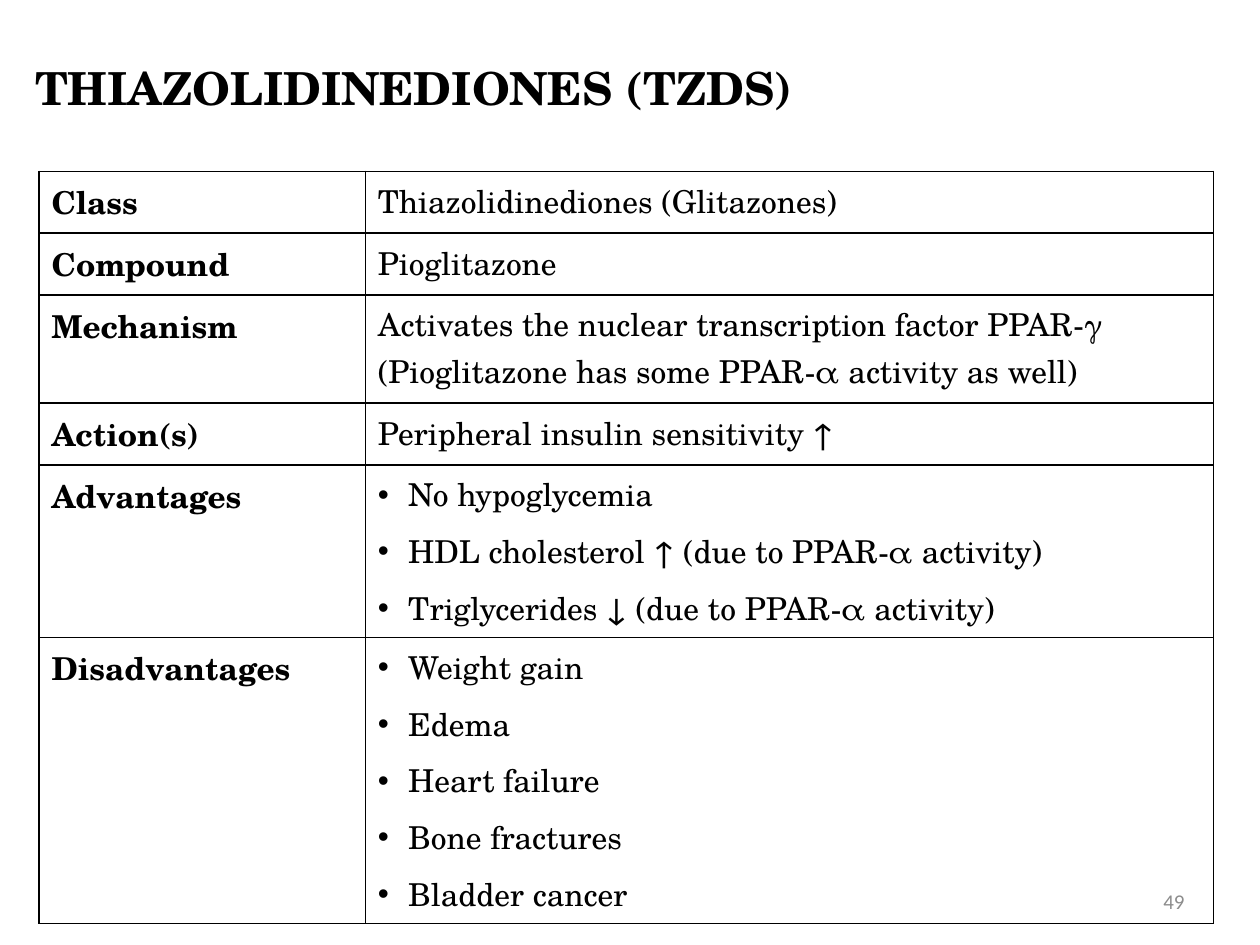
from pptx import Presentation
from pptx.dml.color import RGBColor
from pptx.enum.text import MSO_ANCHOR, PP_ALIGN
from pptx.oxml import parse_xml
from pptx.oxml.ns import nsdecls
from pptx.util import Inches, Pt

SERIF = "TeX Gyre Schola"


def style(paragraph, size, color="000000", bold=False, name=SERIF):
    for span in paragraph.runs:
        span.font.size = Pt(size)
        span.font.bold = bold
        span.font.name = name
        span.font.color.rgb = RGBColor.from_string(color)


def add_text(page, text, left, top, width, height):
    box = page.shapes.add_textbox(Inches(left), Inches(top), Inches(width), Inches(height))
    box.text_frame.word_wrap = True
    box.text_frame.vertical_anchor = MSO_ANCHOR.MIDDLE
    box.text_frame.text = text
    return box.text_frame.paragraphs[0]


deck = Presentation()
deck.slide_width, deck.slide_height = Inches(10), Inches(7.5)
page = deck.slides.add_slide(deck.slide_layouts[6])

# Title
title = add_text(page, "THIAZOLIDINEDIONES (TZDS)", 0.18, 0.3, 9.57, 0.78)
style(title, 26, bold=True)

# Drug profile: label, row height, entries (several entries become bullets)
profile = [
    ("Class", 0.49, ["Thiazolidinediones (Glitazones)"]),
    ("Compound", 0.49, ["Pioglitazone"]),
    ("Mechanism", 0.86, ["Activates the nuclear transcription factor PPAR-γ "
                         "(Pioglitazone has some PPAR-α activity as well)"]),
    ("Action(s)", 0.49, ["Peripheral insulin sensitivity ↑"]),
    ("Advantages", 1.37, ["No hypoglycemia",
                          "HDL cholesterol ↑ (due to PPAR-α activity)",
                          "Triglycerides ↓ (due to PPAR-α activity)"]),
    ("Disadvantages", 2.27, ["Weight gain", "Edema", "Heart failure",
                             "Bone fractures", "Bladder cancer"]),
]

# Table
table_height = sum(height for label, height, entries in profile)
frame = page.shapes.add_table(len(profile), 2, Inches(0.31), Inches(1.36),
                              Inches(9.32), Inches(table_height))
table = frame.table
table.first_row = table.horz_banding = False
table.columns[0].width, table.columns[1].width = Inches(2.59), Inches(6.73)

for row, (label, height, entries) in enumerate(profile):
    table.rows[row].height = Inches(height)
    for column, lines in enumerate([[label], entries]):
        cell = table.cell(row, column)
        cell.text_frame.text = "\n".join(lines)
        for index, paragraph in enumerate(cell.text_frame.paragraphs):
            if index > 0:
                paragraph.space_before = Pt(6)
            if len(lines) > 1:
                properties = paragraph._p.get_or_add_pPr()
                properties.set("marL", str(Inches(0.24)))
                properties.set("indent", str(-Inches(0.24)))
                properties.append(parse_xml(f'<a:buFont {nsdecls("a")} typeface="Arial"/>'))
                properties.append(parse_xml(f'<a:buChar {nsdecls("a")} char="•"/>'))
            style(paragraph, 18, bold=column == 0)

        # Borders come before the fill in the cell properties
        for side in ("lnL", "lnR", "lnT", "lnB"):
            cell._tc.get_or_add_tcPr().append(parse_xml(
                f'<a:{side} {nsdecls("a")} w="{Pt(1)}"><a:solidFill>'
                f'<a:srgbClr val="000000"/></a:solidFill></a:{side}>'))
        cell.fill.background()

# Page number
number = add_text(page, "49", 7.17, 6.95, 2.33, 0.4)
number.alignment = PP_ALIGN.RIGHT
style(number, 12, "8C8C8C", name="Calibri")

deck.save("out.pptx")
